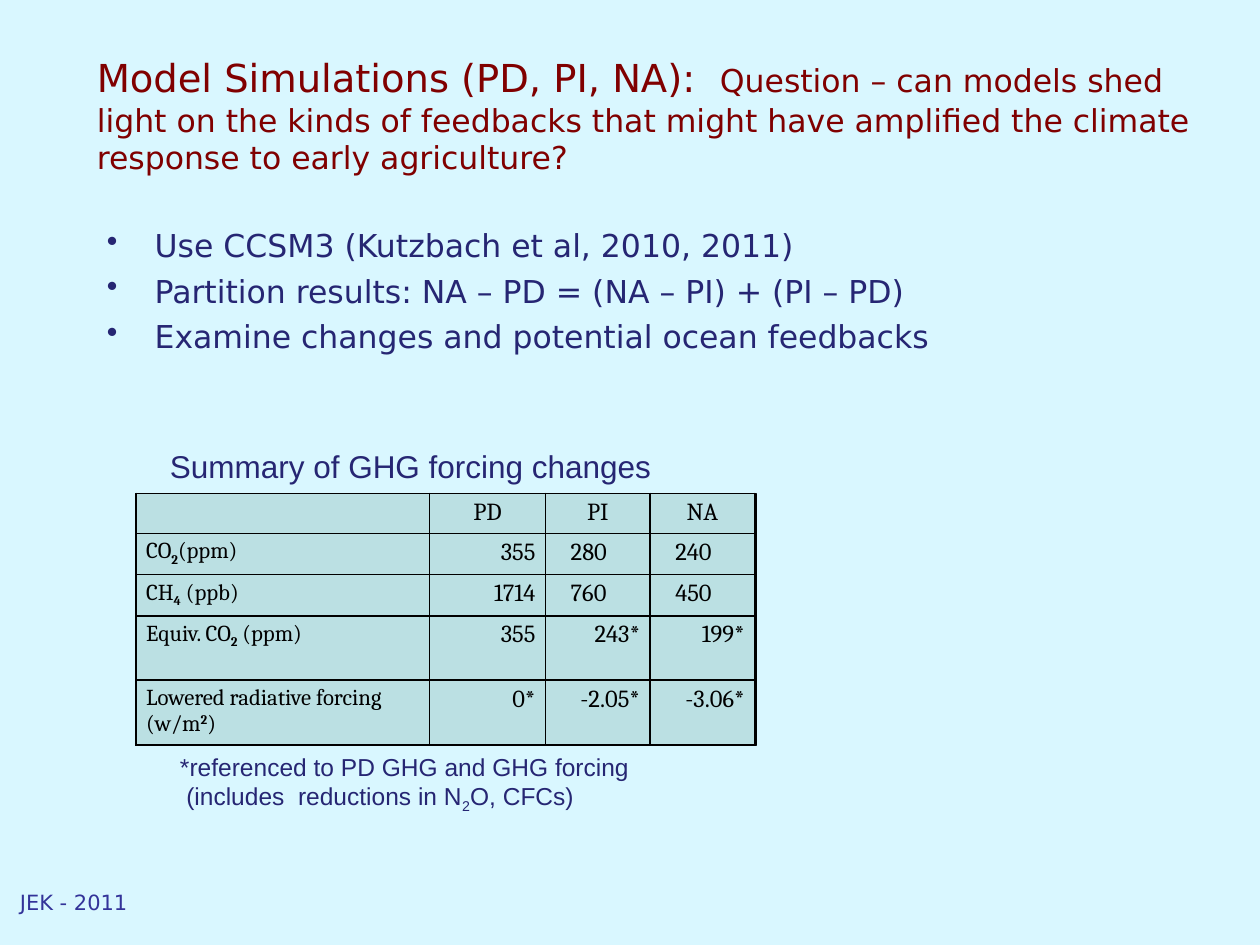
"""Build the model simulations slide with its greenhouse gas forcing table."""
import lxml.etree
import pptx
import pptx.dml.color
import pptx.enum.shapes
import pptx.enum.text
import pptx.oxml.ns
import pptx.util

W, H = 10, 7.5
SANS, ARIAL, SERIF = "DejaVu Sans", "Arial", "Cambria"
MAROON, NAVY, BLUE, BLACK = "800000", "262673", "333399", "000000"
ALIGN = {
    "l": pptx.enum.text.PP_ALIGN.LEFT,
    "c": pptx.enum.text.PP_ALIGN.CENTER,
    "r": pptx.enum.text.PP_ALIGN.RIGHT,
}
TITLE = [
    ("Model Simulations (PD, PI, NA):  ", 22),
    ("Question – can models shed light on the kinds of feedbacks that might have "
     "amplified the climate response to early agriculture?", 18),
]
BULLETS = [
    "Use CCSM3 (Kutzbach et al, 2010, 2011)",
    "Partition results: NA – PD = (NA – PI) + (PI – PD)",
    "Examine changes and potential ocean feedbacks",
]
CAPTION = "Summary of GHG forcing changes"
NOTE = [
    [("*referenced to PD GHG and GHG forcing", 14)],
    [("(includes  reductions in N", 14), ("2", 14, -25), ("O, CFCs)", 14)],
]
FOOTER = "JEK - 2011"
HEADER = ["PD", "PI", "NA"]
ROWS = [
    (("CO", -25, "(ppm)"), ["355", "280", "240"], "rll"),
    (("CH", -25, " (ppb)"), ["1714", "760", "450"], "rll"),
    (("Equiv. CO", -25, " (ppm)"), ["355", "243*", "199*"], "rrr"),
    (("Lowered radiative forcing (w/m", 30, ")"), ["0*", "-2.05*", "-3.06*"], "rrr"),
]
SUBSCRIPTS = ["2", "4", "2", "2"]
COL_WIDTHS = [2.33, 0.92, 0.83, 0.83]
ROW_HEIGHTS = [0.32, 0.32, 0.32, 0.51, 0.51]
BOXES = {
    "title": (6.7, 4.4, 90.8, 15.6),
    "bullets": (7.5, 23.3, 85, 17.8),
    "footer": (-10, 93.5, 31.7, 6.7),
    "caption": (12.5, 46.7, 80, 5.3),
    "table": (10.8, 52.2, 49.2, 26.7),
    "note": (13.3, 78.9, 45.8, 7.8),
}


def place(name):
    """Turn a box in percent of the slide into lengths."""
    return [pptx.util.Inches(v * side / 100) for v, side in zip(BOXES[name], (W, H, W, H))]


def rgb(value):
    """Return the colour for a hex string."""
    return pptx.dml.color.RGBColor.from_string(value)


def add_xml(parent, tag, **attrs):
    """Append a drawing element and return it."""
    return lxml.etree.SubElement(parent, pptx.oxml.ns.qn(tag), attrs)


def add_runs(p, runs, font, color):
    """Add runs given as text, size and optional baseline shift in percent."""
    for text, size, *base in runs:
        r = p.add_run()
        r.text = text
        r.font.size = pptx.util.Pt(size)
        r.font.name = font
        r.font.color.rgb = rgb(color)
        if base:
            r.font._element.set("baseline", str(base[0] * 1000))


def indent(p, left, first=0):
    """Set the left margin and first-line indent in inches."""
    pPr = p._p.get_or_add_pPr()
    pPr.set("marL", str(pptx.util.Inches(left)))
    pPr.set("indent", str(pptx.util.Inches(first)))
    return pPr


def add_text(s, name, paragraphs, font, color, align="l"):
    """Add a wrapped text box and return its frame."""
    tf = s.shapes.add_textbox(*place(name)).text_frame
    tf.word_wrap = True
    for i, runs in enumerate(paragraphs):
        p = tf.add_paragraph() if i else tf.paragraphs[0]
        p.alignment = ALIGN[align]
        add_runs(p, runs, font, color)
    return tf


def style_cell(cell):
    """Give a cell its margins, black borders and no fill."""
    cell.margin_left = cell.margin_right = pptx.util.Inches(0.08)
    cell.margin_top = cell.margin_bottom = pptx.util.Inches(0.04)
    tcPr = cell._tc.get_or_add_tcPr()
    for side in "LRTB":
        ln = add_xml(tcPr, f"a:ln{side}", w=str(pptx.util.Pt(1)))
        add_xml(add_xml(ln, "a:solidFill"), "a:srgbClr", val=BLACK)
    cell.fill.background()


def add_forcing_table(s):
    """Add the tinted panel and the table on it."""
    panel = s.shapes.add_shape(pptx.enum.shapes.MSO_SHAPE.RECTANGLE, *place("table"))
    panel.shadow.inherit = False
    panel.fill.solid()
    panel.fill.fore_color.rgb = rgb("BBE0E3")
    panel.line.color.rgb = rgb(BLACK)
    panel.line.width = pptx.util.Pt(0.75)

    table = s.shapes.add_table(len(ROW_HEIGHTS), len(COL_WIDTHS), *place("table")).table
    table.first_row = table.horz_banding = False
    for col, width in zip(table.columns, COL_WIDTHS):
        col.width = pptx.util.Inches(width)
    for row, height in zip(table.rows, ROW_HEIGHTS):
        row.height = pptx.util.Inches(height)
    for cell in table.iter_cells():
        style_cell(cell)
    add_xml(table.cell(0, 0).text_frame.paragraphs[0]._p, "a:endParaRPr", sz="1400")

    for i, ((before, base, after), _, _) in enumerate(ROWS):
        p = table.cell(i + 1, 0).text_frame.paragraphs[0]
        add_runs(p, [(before, 13), (SUBSCRIPTS[i], 13, base), (after, 13)], SERIF, BLACK)
        p.runs[1].font.bold = True
    values = [(HEADER, "ccc")] + [row[1:] for row in ROWS]
    for i, (texts, aligns) in enumerate(values):
        for j, (text, align) in enumerate(zip(texts, aligns), 1):
            p = table.cell(i, j).text_frame.paragraphs[0]
            p.alignment = ALIGN[align]
            if align == "l":
                indent(p, 0.12)
            add_runs(p, [(text, 14)], SERIF, BLACK)


def main():
    """Build and save the slide."""
    prs = pptx.Presentation()
    prs.slide_width, prs.slide_height = pptx.util.Inches(W), pptx.util.Inches(H)
    s = prs.slides.add_slide(prs.slide_layouts[6])
    s.background.fill.solid()
    s.background.fill.fore_color.rgb = rgb("D9F7FF")

    tf = add_text(s, "title", [TITLE], SANS, MAROON)
    tf.vertical_anchor = pptx.enum.text.MSO_ANCHOR.MIDDLE
    tf = add_text(s, "bullets", [[(text, 18)] for text in BULLETS], SANS, NAVY)
    for i, p in enumerate(tf.paragraphs):
        if i:
            p.space_before = pptx.util.Pt(4.2)
        add_xml(indent(p, 0.38, -0.38), "a:buChar", char="•")
    add_text(s, "footer", [[(FOOTER, 12)]], SANS, BLUE, "c")
    add_text(s, "caption", [[(CAPTION, 18)]], ARIAL, NAVY)
    add_forcing_table(s)
    tf = add_text(s, "note", NOTE, ARIAL, NAVY)
    indent(tf.paragraphs[1], 0.05)
    prs.save("out.pptx")


if __name__ == "__main__":
    main()
